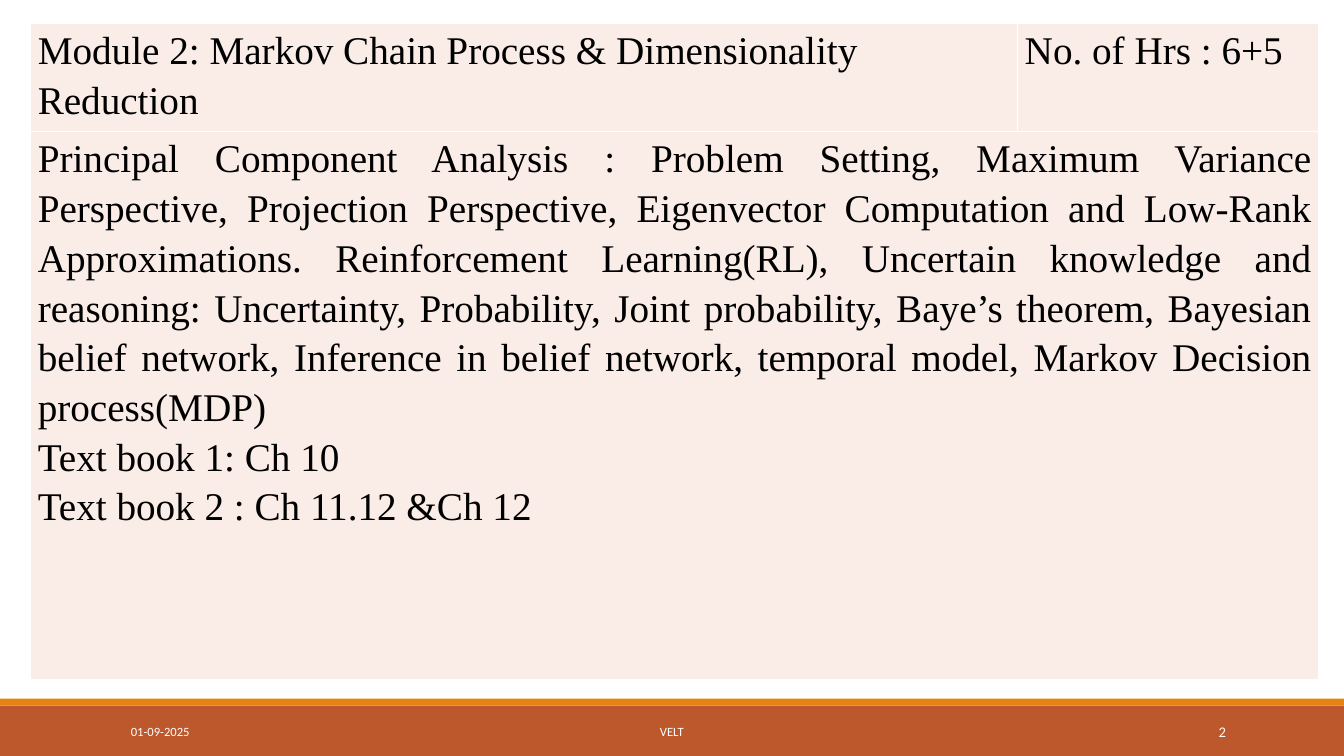
from lxml import etree
from pptx import Presentation
from pptx.dml.color import RGBColor
from pptx.enum.shapes import MSO_SHAPE
from pptx.enum.text import MSO_ANCHOR, PP_ALIGN
from pptx.oxml.ns import qn
from pptx.util import Pt

RECTANGLE = MSO_SHAPE.RECTANGLE
MIDDLE = MSO_ANCHOR.MIDDLE
LEFT, CENTER, RIGHT, JUSTIFY = PP_ALIGN.LEFT, PP_ALIGN.CENTER, PP_ALIGN.RIGHT, PP_ALIGN.JUSTIFY

SLIDE_WIDTH, SLIDE_HEIGHT = 960, 540
WHITE, BLACK = "FFFFFF", "000000"
RUST, ORANGE, BLUSH = "BD582C", "E48312", "FAECE6"

TOPICS = (
    "Principal Component Analysis : Problem Setting, Maximum Variance Perspective, "
    "Projection Perspective, Eigenvector Computation and Low-Rank Approximations. "
    "Reinforcement Learning(RL), Uncertain knowledge and reasoning: Uncertainty, "
    "Probability, Joint probability, Baye’s theorem, Bayesian belief network, "
    "Inference in belief network, temporal model, Markov Decision process(MDP)"
)
MODULE_CELLS = {
    (0, 0): [("Module 2: Markov Chain Process & Dimensionality Reduction", LEFT, 1.14, 0)],
    (0, 1): [("No. of Hrs : 6+5", LEFT, 1.14, 0)],
    (1, 0): [
        (TOPICS, JUSTIFY, 1.15, 0),
        ("Text book 1: Ch 10", JUSTIFY, 1.15, 0),
        ("Text book 2 : Ch 11.12 &Ch 12", JUSTIFY, 1.07, 1.8),
    ],
}


def color(hex_string):
    """Return the colour for a hex string."""
    return RGBColor.from_string(hex_string)


def add_run(paragraph, text, font_name, size, hex_string):
    """Append one formatted run to a paragraph."""
    run = paragraph.add_run()
    run.text = text
    run.font.name = font_name
    run.font.size = Pt(size)
    run.font.color.rgb = color(hex_string)


def add_bar(slide, left, top, width, height, hex_string):
    """Add a plain filled bar."""
    bar = slide.shapes.add_shape(RECTANGLE, Pt(left), Pt(top), Pt(width), Pt(height))
    bar.shadow.inherit = False
    bar.fill.solid()
    bar.fill.fore_color.rgb = color(hex_string)
    bar.line.fill.background()


def add_footer(slide, left, top, width, height):
    """Add the footer band with its accent strip, date, name and number."""
    accent_height = 5
    add_bar(slide, left, top + accent_height, width, height - accent_height, RUST)
    add_bar(slide, left, top, width, accent_height, ORANGE)
    for offset, label_width, text, size, alignment in (
        (86.4, 194.4, "01-09-2025", 9, LEFT),
        (290.2, 379.4, "VELT", 9, CENTER),
        (779.8, 103, "2", 10.5, RIGHT),
    ):
        label = slide.shapes.add_textbox(
            Pt(left + offset), Pt(top + 9.3), Pt(label_width), Pt(28.8))
        frame = label.text_frame
        frame.word_wrap = True
        frame.vertical_anchor = MIDDLE
        paragraph = frame.paragraphs[0]
        paragraph.alignment = alignment
        add_run(paragraph, text, "Calibri", size, WHITE)


def set_borders(cell):
    """Give a cell thin white lines on all four sides."""
    properties = cell._tc.get_or_add_tcPr()
    for position, side in enumerate(("a:lnL", "a:lnR", "a:lnT", "a:lnB")):
        line = etree.Element(qn(side), w=str(Pt(1)))
        fill = etree.SubElement(line, qn("a:solidFill"))
        etree.SubElement(fill, qn("a:srgbClr"), val=WHITE)
        properties.insert(position, line)


def fill_cell(cell, paragraphs):
    """Write justified or left-aligned paragraphs with side indents."""
    frame = cell.text_frame
    for index, (text, alignment, line_spacing, space_before) in enumerate(paragraphs):
        paragraph = frame.add_paragraph() if index else frame.paragraphs[0]
        paragraph.alignment = alignment
        paragraph.line_spacing = line_spacing
        paragraph.space_before = Pt(space_before)
        properties = paragraph._p.get_or_add_pPr()
        for side in ("marL", "marR"):
            properties.set(side, str(Pt(5)))
        add_run(paragraph, text, "Times New Roman", 28, BLACK)


def add_module_table(slide, left, top, width, height):
    """Add the module table with a heading row and a merged topics row."""
    hours_width, heading_height = 215, 72
    table = slide.shapes.add_table(
        2, 2, Pt(left), Pt(top), Pt(width), Pt(height)).table
    table.columns[0].width = Pt(width - hours_width)
    table.columns[1].width = Pt(hours_width)
    table.rows[0].height = Pt(heading_height)
    table.rows[1].height = Pt(height - heading_height)
    table.first_row = False
    table.horz_banding = False
    table.cell(1, 0).merge(table.cell(1, 1))
    for cell in table.iter_cells():
        cell.margin_left = cell.margin_right = Pt(0)
        cell.margin_top = cell.margin_bottom = Pt(0)
        cell.fill.solid()
        cell.fill.fore_color.rgb = color(BLUSH)
        set_borders(cell)
    for (row, column), paragraphs in MODULE_CELLS.items():
        fill_cell(table.cell(row, column), paragraphs)


def main():
    """Build and save the module slide."""
    presentation = Presentation()
    presentation.slide_width = Pt(SLIDE_WIDTH)
    presentation.slide_height = Pt(SLIDE_HEIGHT)
    slide = presentation.slides.add_slide(presentation.slide_layouts[6])
    footer_top = 499
    add_footer(slide, 0, footer_top, SLIDE_WIDTH, SLIDE_HEIGHT - footer_top)
    add_module_table(slide, 22, 17, 920, 463.5)
    presentation.save("out.pptx")


if __name__ == "__main__":
    main()
